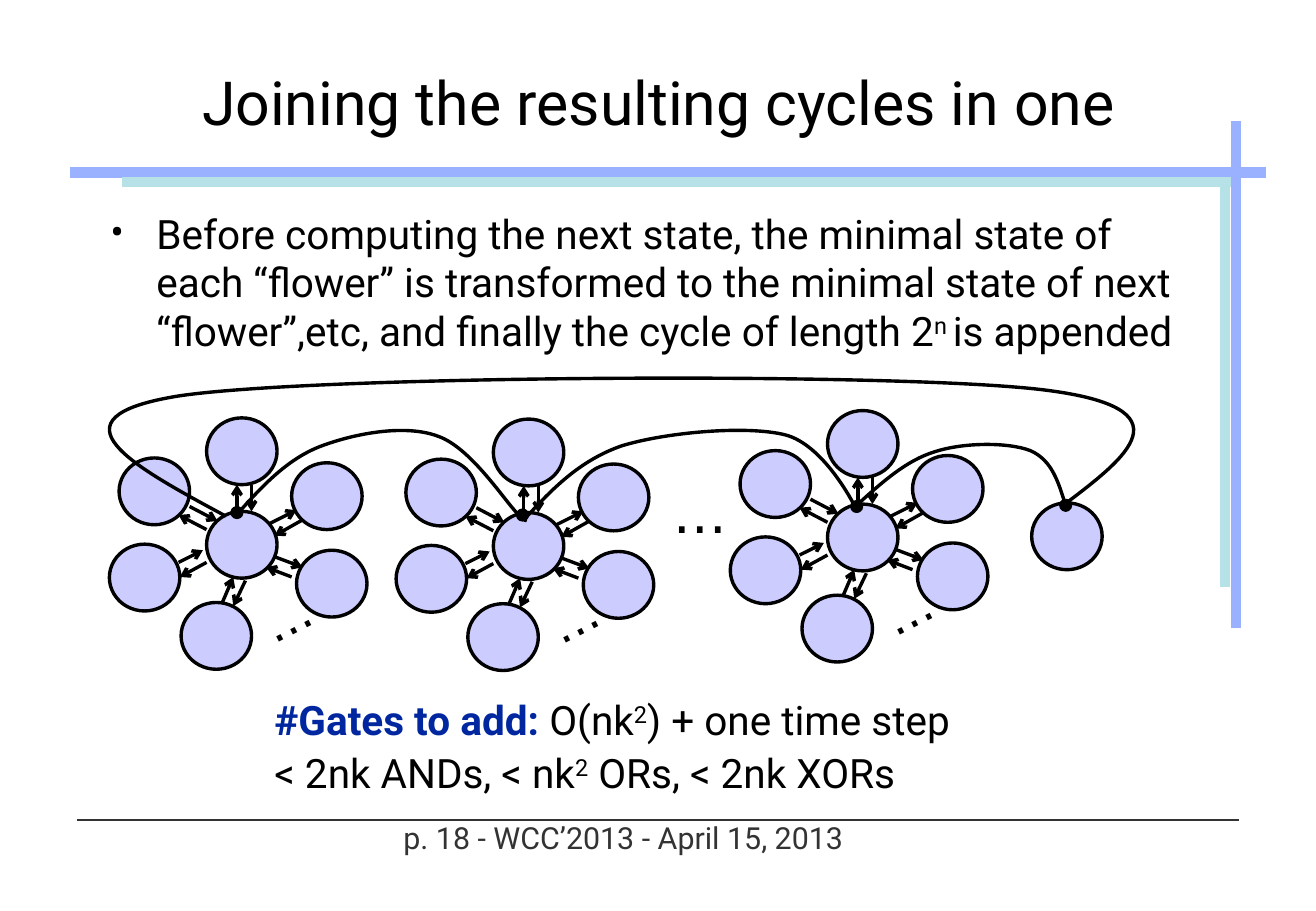
from lxml import etree
from pptx import Presentation
from pptx.dml.color import RGBColor
from pptx.enum.shapes import MSO_CONNECTOR, MSO_SHAPE
from pptx.enum.text import MSO_ANCHOR, MSO_AUTO_SIZE, PP_ALIGN
from pptx.oxml.ns import qn
from pptx.util import Inches, Pt

BLACK = RGBColor(0x00, 0x00, 0x00)
GREY = RGBColor(0x33, 0x33, 0x33)
LILAC = RGBColor(0xCC, 0xCC, 0xFF)
BLUE = RGBColor(0x99, 0xB1, 0xFF)
AQUA = RGBColor(0xB5, 0xE1, 0xE7)
NAVY = RGBColor(0x00, 0x27, 0x9F)
STATE_W, STATE_H, DOT = 0.58, 0.55, 0.08

prs = Presentation()
prs.slide_width, prs.slide_height = Inches(10.83), Inches(7.5)
slide = prs.slides.add_slide(prs.slide_layouts[5])
shapes = slide.shapes


def add_line(x1, y1, x2, y2, color, width, arrow=False):
    line = shapes.add_connector(MSO_CONNECTOR.STRAIGHT, Inches(x1), Inches(y1), Inches(x2), Inches(y2))
    line.line.color.rgb = color
    line.line.width = Pt(width)
    if arrow:
        etree.SubElement(line._element.spPr.get_or_add_ln(), qn("a:tailEnd"), type="arrow")
    etree.SubElement(line._element.spPr, qn("a:effectLst"))


def add_circle(x, y, w, h, fill):
    sp = shapes.add_shape(MSO_SHAPE.OVAL, Inches(x), Inches(y), Inches(w), Inches(h))
    sp.shadow.inherit = False
    sp.fill.solid()
    sp.fill.fore_color.rgb = fill
    sp.line.color.rgb = BLACK
    sp.line.width = Pt(2)


# Frame lines
for x1, y1, x2, y2, color, width in [
    (0.63, 6.75, 10.2, 6.75, GREY, 1.5),
    (0.58, 1.42, 10.42, 1.42, BLUE, 6),
    (1, 1.5, 10.17, 1.5, AQUA, 6),
    (10.08, 1.5, 10.08, 4.83, AQUA, 6),
    (10.17, 1, 10.17, 5.17, BLUE, 6),
]:
    add_line(x1, y1, x2, y2, color, width)

# Title
title = shapes.title
title.left, title.top, title.width, title.height = Inches(0.83), Inches(0.33), Inches(9.18), Inches(1)
tf = title.text_frame
tf.text = "Joining the resulting cycles in one"
tf.vertical_anchor = MSO_ANCHOR.MIDDLE
tf.margin_left = tf.margin_right = tf.margin_top = tf.margin_bottom = Inches(0.08)
p = tf.paragraphs[0]
p.alignment = PP_ALIGN.CENTER
font = p.runs[0].font
font.name, font.size, font.color.rgb = "Roboto", Pt(36), BLACK

# Flowers: petals and arrows are offsets from the corner of the central state
flowers = [(1.7, 4.21), (4.06, 4.22), (6.81, 4.15)]
states = [(0, 0), (0, -0.77), (0.7, -0.4), (0.74, 0.32), (-0.72, -0.44), (-0.8, 0.27), (-0.21, 0.75)]
arrows = [
    (0.25, 0, 0.25, -0.22), (0.37, -0.22, 0.37, 0),
    (0.52, 0.1, 0.74, -0.01), (0.79, 0.07, 0.56, 0.2),
    (0.13, 0.75, 0.22, 0.54), (0.32, 0.57, 0.22, 0.78),
    (0.55, 0.37, 0.79, 0.46), (0.7, 0.54, 0.49, 0.46),
    (-0.14, -0.04, 0.09, 0.08), (0, 0.15, -0.23, 0.03),
    (-0.23, 0.42, -0.03, 0.32), (0, 0.42, -0.22, 0.54),
]
for x, y in flowers:
    for dx, dy in states:
        add_circle(x + dx, y + dy, STATE_W, STATE_H, LILAC)
    for x1, y1, x2, y2 in arrows:
        add_line(x + x1, y + y1, x + x2, y + y2, BLACK, 2, arrow=True)

# Long cycle and the minimal states
add_circle(8.49, 4.14, STATE_W, STATE_H, LILAC)
for x, y in [(1.91, 4.18), (4.26, 4.2), (7.01, 4.13), (8.73, 4.12)]:
    add_circle(x, y, DOT, DOT, BLACK)

# Joining curves: a start point, then three points for each Bézier piece
curves = [
    [(8.75, 4.16), (9.28, 3.76), (9.8, 3.36), (8.59, 3.21), (7.37, 3.06), (2.59, 3.09),
     (1.47, 3.26), (0.35, 3.44), (1.1, 3.84), (1.86, 4.25)],
    [(1.99, 4.19), (2.18, 3.98), (2.38, 3.77), (2.65, 3.67), (2.92, 3.57), (3.33, 3.49),
     (3.6, 3.59), (3.87, 3.68), (4.15, 4.12), (4.26, 4.23), (4.37, 4.33), (4.32, 4.28), (4.26, 4.22)],
    [(4.32, 4.27), (4.54, 4.03), (4.77, 3.79), (5.12, 3.67), (5.48, 3.56), (6.14, 3.5),
     (6.46, 3.58), (6.78, 3.66), (7.03, 4.16), (7.03, 4.16)],
    [(7.06, 4.15), (7.26, 3.97), (7.46, 3.79), (7.69, 3.72), (7.93, 3.64), (8.3, 3.64),
     (8.48, 3.71), (8.66, 3.79), (8.71, 3.97), (8.77, 4.16)],
]
for curve in curves:
    start, *points = [(Inches(x), Inches(y)) for x, y in curve]
    builder = shapes.build_freeform(*start)
    builder.add_line_segments(points, close=False)
    sp = builder.convert_to_shape()
    sp.shadow.inherit = False
    sp.fill.background()
    sp.line.color.rgb = BLACK
    sp.line.width = Pt(2)
    segments = list(sp._element.iter(qn("a:lnTo")))
    outline = segments[0].getparent()
    for i in range(0, len(segments), 3):
        bezier = etree.SubElement(outline, qn("a:cubicBezTo"))
        for segment in segments[i:i + 3]:
            bezier.append(segment[0])
            outline.remove(segment)

# Ellipses
ellipses = [(x + 0.34, y + 0.65, 0.36, 0.38, 333, 28) for x, y in flowers]
ellipses.append((5.44, 3.9, 0.57, 0.64, 0, 32))
for x, y, w, h, angle, size in ellipses:
    sp = shapes.add_textbox(Inches(x), Inches(y), Inches(w), Inches(h))
    sp.rotation = angle
    tf = sp.text_frame
    tf.text = "…"
    tf.word_wrap = False
    tf.auto_size = MSO_AUTO_SIZE.SHAPE_TO_FIT_TEXT
    font = tf.paragraphs[0].runs[0].font
    font.name, font.size, font.color.rgb = "DejaVu Sans", Pt(size), BLACK

# Body, gate count and footer
body = shapes.add_textbox(Inches(0.81), Inches(1.67), Inches(9.1), Inches(1.4)).text_frame
gates = shapes.add_textbox(Inches(2.16), Inches(5.67), Inches(5.97), Inches(0.95)).text_frame
footer = shapes.add_textbox(Inches(3.19), Inches(6.7), Inches(3.88), Inches(0.38)).text_frame
body.word_wrap = gates.word_wrap = True
footer.word_wrap = False
gates.auto_size = footer.auto_size = MSO_AUTO_SIZE.SHAPE_TO_FIT_TEXT
footer.margin_left = footer.margin_right = footer.margin_top = footer.margin_bottom = Inches(0.04)

bullet, order, counts, note = body.paragraphs[0], gates.paragraphs[0], gates.add_paragraph(), footer.paragraphs[0]
bullet.space_before = Pt(2)
pPr = bullet._p.get_or_add_pPr()
pPr.set("marL", str(Inches(0.38)))
pPr.set("indent", str(-Inches(0.38)))
etree.SubElement(pPr, qn("a:buFont"), typeface="Roboto")
etree.SubElement(pPr, qn("a:buChar"), char="•")
order.space_after = counts.space_after = Pt(3)
note.alignment = PP_ALIGN.CENTER

# Every second run is a superscript
for p, size, color, texts in [
    (bullet, 24, BLACK, [
        "Before computing the next state, the minimal state of each “flower” is transformed to the "
        "minimal state of next “flower”,etc, and finally the cycle of length 2", "n ", "is appended"]),
    (order, 24, BLACK, ["O(nk", "2", ") + one time step"]),
    (counts, 24, BLACK, ["< 2nk ANDs, < nk", "2", " ORs, < 2nk XORs"]),
    (note, 18, GREY, ["p. 18 - WCC’2013 - April 15, 2013"]),
]:
    if p is order:
        r = p.add_run()
        r.text = "#Gates to add: "
        r.font.name, r.font.size, r.font.bold, r.font.color.rgb = "Roboto", Pt(size), True, NAVY
    for i, text in enumerate(texts):
        r = p.add_run()
        r.text = text
        r.font.name, r.font.size, r.font.color.rgb = "Roboto", Pt(size), color
        if i % 2:
            r._r.get_or_add_rPr().set("baseline", "30000")

prs.save("out.pptx")
